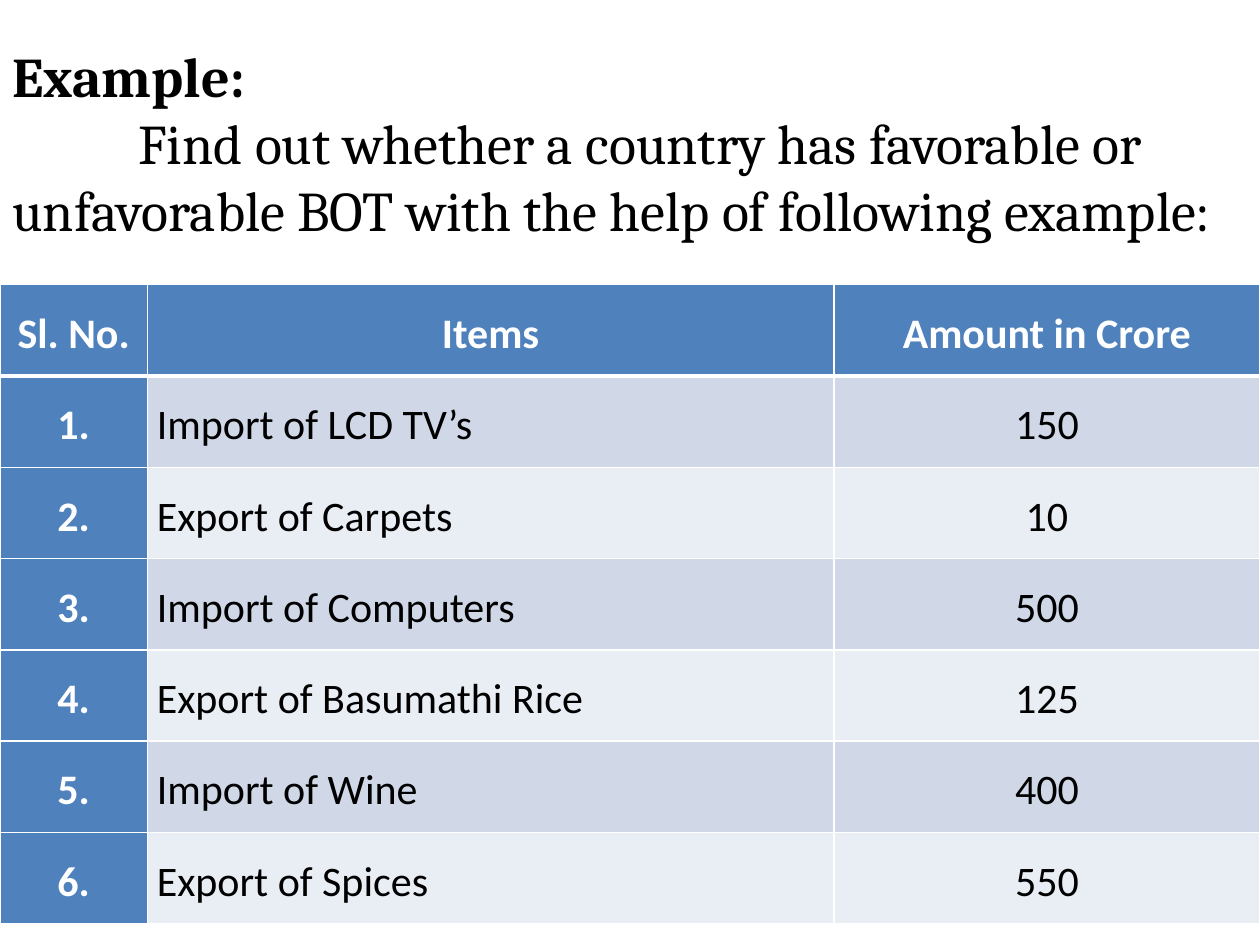
from dataclasses import dataclass

from lxml import etree
from pptx import Presentation
from pptx.dml.color import RGBColor
from pptx.enum.text import MSO_ANCHOR, PP_ALIGN
from pptx.oxml.ns import qn
from pptx.util import Cm, Pt

LEFT, CENTER = PP_ALIGN.LEFT, PP_ALIGN.CENTER
MIDDLE = MSO_ANCHOR.MIDDLE


@dataclass(frozen=True)
class Theme:
    black: str = "000000"
    white: str = "FFFFFF"
    accent: str = "4F81BD"
    bands: tuple = ("D0D8E8", "E9EDF4")
    intro_font: str = "Cambria"
    table_font: str = "Calibri"
    intro_size: int = 32
    table_size: int = 24


theme = Theme()


def style_font(p, name, size, color, bold):
    p.font.name = name
    p.font.size = Pt(size)
    p.font.bold = bold
    p.font.color.rgb = RGBColor.from_string(color)


def add_border(cell, side, width):
    """Draw one white cell edge; call before the cell is filled."""
    ln = etree.SubElement(cell._tc.get_or_add_tcPr(), qn(f"a:ln{side}"), w=str(Pt(width)))
    fill = etree.SubElement(ln, qn("a:solidFill"))
    etree.SubElement(fill, qn("a:srgbClr"), val=theme.white)


prs = Presentation()
prs.slide_width, prs.slide_height = Cm(25.4), Cm(19.05)
slide = prs.slides.add_slide(prs.slide_layouts[6])

# Table of imports and exports
header = ("Sl. No.", "Items", "Amount in Crore")
trades = (
    ("Import of LCD TV’s", 150),
    ("Export of Carpets", 10),
    ("Import of Computers", 500),
    ("Export of Basumathi Rice", 125),
    ("Import of Wine", 400),
    ("Export of Spices", 550),
)
rows = [header] + [(f"{n}.", item, str(amount)) for n, (item, amount) in enumerate(trades, 1)]
col_widths = (2.97, 13.84, 8.59)
row_height = 1.84
table = slide.shapes.add_table(
    len(rows), len(header), Cm(0), Cm(5.74), Cm(sum(col_widths)), Cm(row_height * len(rows))
).table
for column, width in zip(table.columns, col_widths):
    column.width = Cm(width)

for i, values in enumerate(rows):
    table.rows[i].height = Cm(row_height)
    for j, value in enumerate(values):
        cell = table.cell(i, j)
        heading = i == 0 or j == 0
        for side in "LRTB":
            under_header = (i, side) in ((0, "B"), (1, "T"))
            add_border(cell, side, 3 if under_header else 1)
        cell.fill.solid()
        color = theme.accent if heading else theme.bands[(i - 1) % 2]
        cell.fill.fore_color.rgb = RGBColor.from_string(color)
        cell.vertical_anchor = MIDDLE
        cell.margin_left = cell.margin_right = Cm(0.19)
        cell.margin_top = cell.margin_bottom = 0
        p = cell.text_frame.paragraphs[0]
        p.text = value
        p.alignment = LEFT if j == 1 and i > 0 else CENTER
        p.line_spacing = 1.15
        style_font(p, theme.table_font, theme.table_size,
                   theme.white if heading else theme.black, heading)

# Introduction above the table
tf = slide.shapes.add_textbox(Cm(0), Cm(0), Cm(24.77), Cm(5.74)).text_frame
tf.word_wrap = True
tf.vertical_anchor = MIDDLE
tf.text = (
    "Example:\n"
    "Find out whether a country has favorable or unfavorable BOT "
    "with the help of following example:"
)
title, question = tf.paragraphs
style_font(title, theme.intro_font, theme.intro_size, theme.black, True)
style_font(question, theme.intro_font, theme.intro_size, theme.black, False)
question._p.get_or_add_pPr().set("indent", str(Cm(2.54)))

prs.save("out.pptx")
